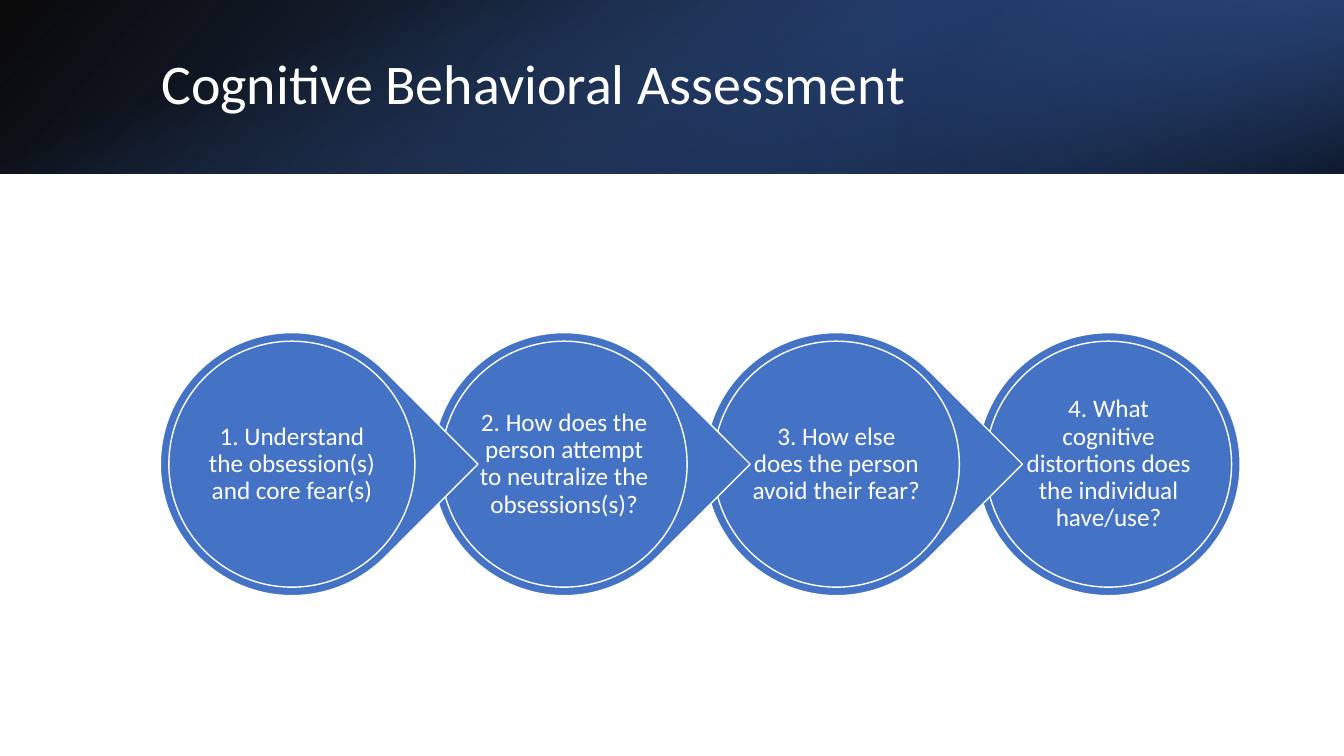
"""Build the Cognitive Behavioral Assessment slide."""
from dataclasses import dataclass

from pptx import Presentation
from pptx import util as u
from pptx.dml.color import RGBColor
from pptx.enum import shapes, text
from pptx.oxml import ns, xmlchemy
from pptx.oxml import parse_xml

WHITE = RGBColor(0xFF, 0xFF, 0xFF)
BLACK = RGBColor(0x00, 0x00, 0x00)
BLUE = RGBColor(0x44, 0x72, 0xC4)
NAVY = RGBColor(0x20, 0x38, 0x64)
STEEL = RGBColor(0x2F, 0x55, 0x97)
WIDE, BAND = 13.33, 1.72
LEFT, TOP, STEP = 1.59, 3.3, 2.7
OUTER, INNER, LABEL = 2.61, 2.44, 1.74
KIND = shapes.MSO_SHAPE


@dataclass
class Stop:
    place: float
    color: RGBColor
    alpha: int


@dataclass
class Band:
    box: tuple[float, float, float, float]
    angle: int
    stops: tuple[Stop, Stop]
    turn: int = 0
    flip: bool = False


BANDS = [
    Band((0, 0, WIDE, BAND), 140,
         (Stop(0, BLACK, 96), Stop(1, STEEL, 100)), flip=True),
    Band((8.89, 0, 4.44, BAND), 320,
         (Stop(0.19, NAVY, 68), Stop(1, BLUE, 79)), turn=180, flip=True),
    Band(((WIDE - BAND) / 2, (BAND - WIDE) / 2, BAND, WIDE), 340,
         (Stop(0.23, BLUE, 0), Stop(0.99, BLACK, 74)), turn=90),
]
STEPS = [
    "1. Understand the obsession(s) and core fear(s)",
    "2. How does the person attempt to neutralize the obsessions(s)?",
    "3. How else does the person avoid their fear?",
    "4. What cognitive distortions does the individual have/use?",
]


def inches(box: tuple) -> list:
    return [u.Inches(side) for side in box]


def write(shape, words: str, *, size: int, align, inset: float | None = None) -> None:
    frame = shape.text_frame
    frame.word_wrap = True
    frame.vertical_anchor = text.MSO_ANCHOR.MIDDLE
    if inset is not None:
        frame.margin_left = frame.margin_right = u.Inches(inset)
        frame.margin_top = frame.margin_bottom = u.Inches(inset)
    line = frame.paragraphs[0]
    line.alignment = align
    line.line_spacing = 0.9
    run = line.add_run()
    run.text = words
    run.font.size = u.Pt(size)
    run.font.name = "Calibri"
    run.font.color.rgb = WHITE


def draw_band(slide, band: Band) -> None:
    shape = slide.shapes.add_shape(KIND.RECTANGLE, *inches(band.box))
    shape.shadow.inherit = False
    shape.line.fill.background()
    shape.rotation = band.turn
    if band.flip:
        shape._element.spPr.xfrm.set("flipH", "1")
    shape.fill.gradient()
    shape.fill.gradient_angle = 360 - band.angle
    for mark, stop in zip(shape.fill.gradient_stops, band.stops):
        mark.position = stop.place
        mark.color.rgb = stop.color
    tints = shape._element.spPr.iter(ns.qn("a:srgbClr"))
    for tint, stop in zip(tints, band.stops):
        tint.append(parse_xml(
            f'<a:alpha {ns.nsdecls("a")} val="{stop.alpha * 1000}"/>'))


def draw_disc(group, kind, mid: tuple[float, float], size: float, turn: int = 0) -> None:
    box = (mid[0] - size / 2, mid[1] - size / 2, size, size)
    disc = group.shapes.add_shape(kind, *inches(box))
    disc.shadow.inherit = False
    disc.fill.solid()
    disc.fill.fore_color.rgb = BLUE
    disc.line.color.rgb = WHITE
    disc.line.width = u.Pt(1)
    disc.rotation = turn


def draw_step(group, index: int, words: str) -> None:
    mid = (LEFT + index * STEP + OUTER / 2, TOP + OUTER / 2)
    if index == len(STEPS) - 1:
        draw_disc(group, KIND.OVAL, mid, OUTER)
    else:
        draw_disc(group, KIND.TEAR, mid, OUTER, 45)
    draw_disc(group, KIND.OVAL, mid, INNER)
    box = (mid[0] - LABEL / 2, mid[1] - LABEL / 2, LABEL, LABEL)
    label = group.shapes.add_textbox(*inches(box))
    write(label, words, size=18, align=text.PP_ALIGN.CENTER, inset=0.03)


def main() -> None:
    deck = Presentation()
    deck.slide_width, deck.slide_height = u.Inches(WIDE), u.Inches(7.5)
    slide = deck.slides.add_slide(deck.slide_layouts[5])
    for band in BANDS:
        draw_band(slide, band)
    title = slide.shapes.title
    title.left, title.top, title.width, title.height = inches((1.5, 0.38, 10.98, 0.96))
    write(title, "Cognitive Behavioral Assessment", size=40, align=text.PP_ALIGN.LEFT)
    slide.shapes._spTree.append(title._element)
    group = slide.shapes.add_group_shape()
    for index, words in reversed(list(enumerate(STEPS))):
        draw_step(group, index, words)
    deck.save("out.pptx")


if __name__ == "__main__":
    main()
